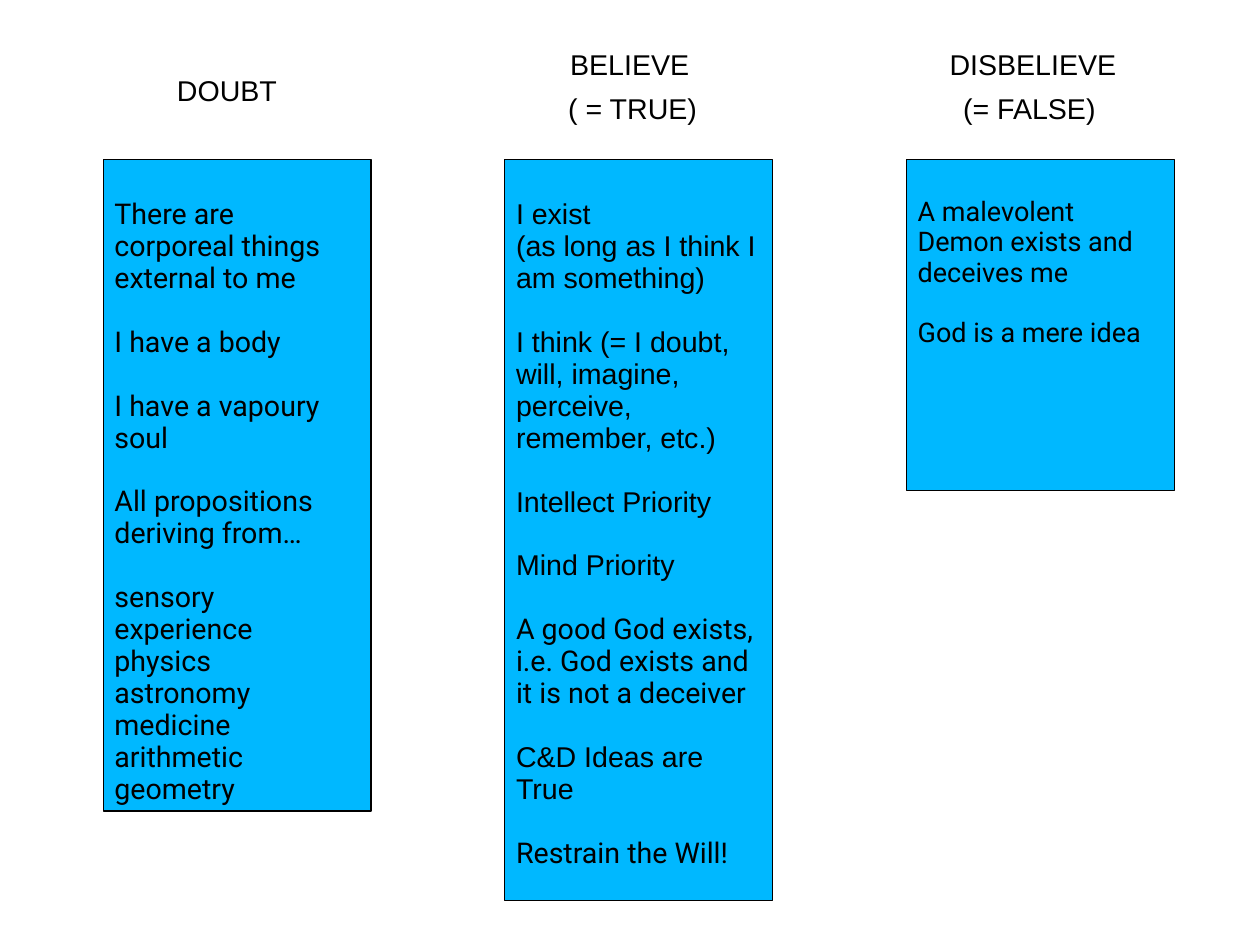
import pptx
import pptx.util
import pptx.dml.color
import pptx.enum.shapes
import pptx.enum.text

Pt = pptx.util.Pt
HUES = {"ink": "000000", "box": "00B8FF"}


def hue(name):
    return pptx.dml.color.RGBColor.from_string(HUES[name])


def write(par, text, font="Arial", size=18, gap=0, align="LEFT"):
    par.line_spacing = 0.93
    par.space_before = Pt(gap)
    par.alignment = getattr(pptx.enum.text.PP_ALIGN, align)
    run = par.add_run()
    run.text = text
    run.font.name = font
    run.font.size = Pt(size)
    run.font.color.rgb = hue("ink")


class Board:
    inset = 3.6
    side = 7.2
    top = 100.5
    width = 168.75

    def __init__(self, slide):
        self.slide = slide

    def frame(self, shape, wrap, top):
        frame = shape.text_frame
        frame.word_wrap = wrap
        frame.vertical_anchor = pptx.enum.text.MSO_ANCHOR.TOP
        frame.margin_left = frame.margin_right = Pt(self.side)
        frame.margin_top = Pt(top)
        frame.margin_bottom = Pt(self.inset)
        return frame

    def label(self, text, left, top, width, align="LEFT"):
        shape = self.slide.shapes.add_textbox(Pt(left), Pt(top), Pt(width), Pt(27.4))
        frame = self.frame(shape, False, self.inset)
        frame.auto_size = pptx.enum.text.MSO_AUTO_SIZE.SHAPE_TO_FIT_TEXT
        write(frame.paragraphs[0], text, align=align)

    def panel(self, left, height, groups, size=18):
        kind = pptx.enum.shapes.MSO_SHAPE.RECTANGLE
        shape = self.slide.shapes.add_shape(
            kind, Pt(left), Pt(self.top), Pt(self.width), Pt(height))
        shape.shadow.inherit = False
        shape.fill.solid()
        shape.fill.fore_color.rgb = hue("box")
        shape.line.color.rgb = hue("ink")
        shape.line.width = Pt(0.75)
        gap = round(size * 1.115, 1)
        frame = self.frame(shape, True, self.inset + gap + 1.4)
        par = frame.paragraphs[0]
        for row, (font, *lines) in enumerate(groups):
            for spot, text in enumerate(lines):
                if row or spot:
                    par = frame.add_paragraph()
                write(par, text, font, size, gap if row and not spot else 0)


LABELS = [
    ("DOUBT", 104.4, 44.3, 78.5, "LEFT"),
    ("BELIEVE", 352.1, 27.7, 90, "LEFT"),
    ("( = TRUE)", 350.9, 55.4, 96.5, "LEFT"),
    ("DISBELIEVE", 591.1, 27.7, 120.2, "LEFT"),
    ("(= FALSE)", 599.2, 55.4, 98.6, "CENTER"),
]

DOUBT = [
    ("Roboto", "There are corporeal things external to me"),
    ("Roboto", "I have a body"),
    ("Roboto", "I have a vapoury soul"),
    ("Roboto", "All propositions deriving from…"),
    ("Roboto", "sensory experience", "physics", "astronomy", "medicine",
     "arithmetic", "geometry"),
]

TRUE = [
    ("Arial", "I exist", "(as long as I think I am something)"),
    ("Arial", "I think (= I doubt, will, imagine, perceive, remember, etc.)"),
    ("Arial", "Intellect Priority"),
    ("Arial", "Mind Priority"),
    ("Roboto", "A good God exists, i.e. God exists and it is not a deceiver"),
    ("Arial", "C&D Ideas are True"),
    ("Roboto", "Restrain the Will!"),
]

FALSE = [
    ("Roboto", "A malevolent Demon exists and deceives me"),
    ("Roboto", "God is a mere idea"),
]


def main():
    deck = pptx.Presentation()
    deck.slide_width = Pt(793.75)
    deck.slide_height = Pt(595.25)
    board = Board(deck.slides.add_slide(deck.slide_layouts[6]))
    for label in LABELS:
        board.label(*label)
    board.panel(65, 410.4, DOUBT)
    board.panel(318, 466.6, TRUE)
    board.panel(571, 208.3, FALSE, size=17)
    deck.save("out.pptx")


if __name__ == "__main__":
    main()
